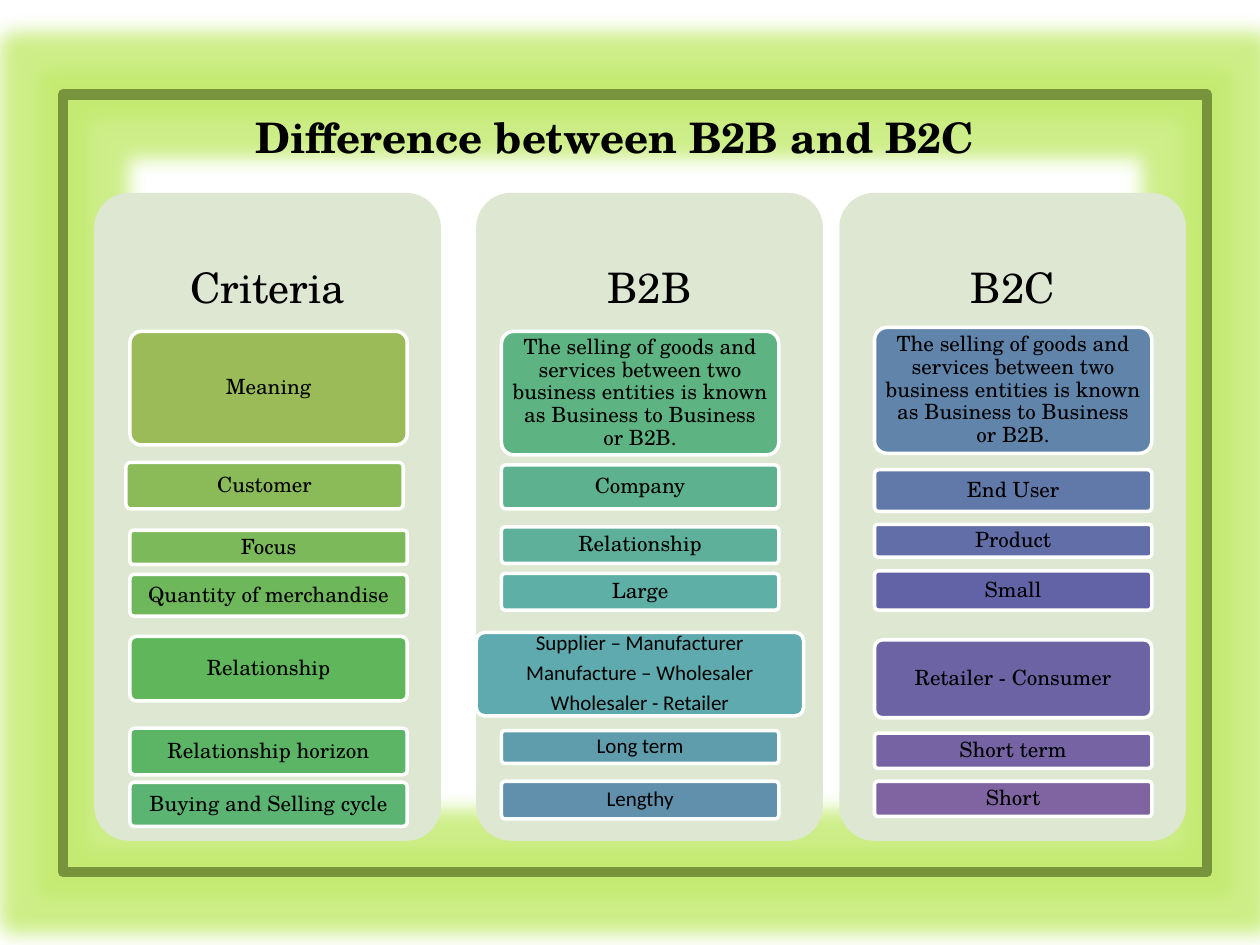
"""Build the slide comparing B2B and B2C by criteria."""
from lxml.etree import SubElement
from pptx import Presentation
from pptx.dml.color import RGBColor
from pptx.enum.shapes import MSO_SHAPE
from pptx.enum.text import MSO_ANCHOR, PP_ALIGN
from pptx.oxml.ns import qn
from pptx.util import Cm, Pt

BLACK = RGBColor(0x00, 0x00, 0x00)
WHITE = RGBColor(0xFF, 0xFF, 0xFF)
FRAME_GREEN = RGBColor(0x77, 0x93, 0x3C)
PANEL_GREEN = RGBColor(0xDE, 0xE7, 0xD1)
GLOW_GREEN = RGBColor(0xC2, 0xEA, 0x6C)
CARD_FILLS = [RGBColor.from_string(code) for code in (
    "9BBB59 8BBA59 7CB95A 6EB75A 5FB65B 5CB565 5CB473 "
    "5DB381 5DB18E 5EB09A 5EAFA6 5FAAAE 5F9DAC 6090AB "
    "6084AA 6179A8 626EA7 6263A6 6C63A5 7663A3 8064A2").split()]

SERIF = "TeX Gyre Schola"
SANS = "Calibri"
PANEL_TOP, PANEL_WIDTH, PANEL_HEIGHT = 3.89, 6.99, 13.06
HEADING_HEIGHT = 3.91
CARD_WIDTH = 5.59
MEANING = ("The selling of goods and services between two business entities "
           "is known as Business to Business or B2B.")

COLUMNS = [
    ("Criteria", 1.9, 2.62, [
        ("Meaning", 6.68, 2.29, {}),
        ("Customer", 9.32, 0.94, {"left": 2.54}),
        ("Focus", 10.69, 0.69, {}),
        ("Quantity of merchandise", 11.58, 0.84, {}),
        ("Relationship", 12.83, 1.3, {}),
        ("Relationship horizon", 14.68, 0.94, {}),
        ("Buying and Selling cycle", 15.77, 0.89, {}),
    ]),
    ("B2B", 9.6, 10.11, [
        (MEANING, 6.68, 2.49, {}),
        ("Company", 9.37, 0.89, {}),
        ("Relationship", 10.62, 0.74, {}),
        ("Large", 11.56, 0.74, {}),
        ("Supplier – Manufacturer\nManufacture – Wholesaler\nWholesaler - Retailer",
         12.75, 1.68, {"left": 9.6, "width": 6.6, "font": SANS}),
        ("Long term", 14.73, 0.66, {"font": SANS}),
        ("Lengthy", 15.75, 0.76, {"font": SANS}),
    ]),
    ("B2C", 16.92, 17.63, [
        (MEANING, 6.6, 2.54, {}),
        ("End User", 9.47, 0.84, {}),
        ("Product", 10.57, 0.66, {}),
        ("Small", 11.51, 0.79, {}),
        ("Retailer - Consumer", 12.9, 1.57, {}),
        ("Short term", 14.78, 0.71, {}),
        ("Short", 15.75, 0.71, {}),
    ]),
]


def write_text(frame, text, size=12, font=SERIF, bold=False, spacing=0.9,
               inset=0.13, anchor=MSO_ANCHOR.MIDDLE):
    """Fill a text frame with centred paragraphs, one per line of text."""
    frame.word_wrap = True
    frame.vertical_anchor = anchor
    frame.margin_left = frame.margin_right = Cm(inset)
    frame.margin_top = frame.margin_bottom = Cm(inset)
    lines = text.split("\n")
    for index, line in enumerate(lines):
        paragraph = frame.paragraphs[0] if index == 0 else frame.add_paragraph()
        paragraph.alignment = PP_ALIGN.CENTER
        paragraph.line_spacing = spacing
        if index < len(lines) - 1:
            paragraph.space_after = Pt(0.35 * size)
        run = paragraph.add_run()
        run.text = line
        run.font.name = font
        run.font.size = Pt(size)
        run.font.bold = bold
        run.font.color.rgb = BLACK


def add_label(slide, text, left, top, width, height, **text_format):
    """Add a text box with formatted text."""
    label = slide.shapes.add_textbox(Cm(left), Cm(top), Cm(width), Cm(height))
    write_text(label.text_frame, text, **text_format)


def add_rounded(slide, left, top, width, height, fill):
    """Add a filled rounded rectangle without outline or shadow."""
    box = slide.shapes.add_shape(MSO_SHAPE.ROUNDED_RECTANGLE,
                                 Cm(left), Cm(top), Cm(width), Cm(height))
    box.adjustments[0] = 0.1
    box.shadow.inherit = False
    box.fill.solid()
    box.fill.fore_color.rgb = fill
    box.line.fill.background()
    return box


def add_card(slide, text, left, top, height, fill, width=CARD_WIDTH, font=SERIF):
    """Add a white-edged card with its text."""
    card = add_rounded(slide, left, top, width, height, fill)
    card.line.color.rgb = WHITE
    card.line.width = Pt(2)
    write_text(card.text_frame, text, font=font)


def add_glowing_frame(slide):
    """Add the green frame with its soft glow."""
    frame = slide.shapes.add_shape(MSO_SHAPE.RECTANGLE, Cm(1.27), Cm(1.91),
                                   Cm(23.06), Cm(15.67))
    frame.shadow.inherit = False
    frame.fill.background()
    frame.line.color.rgb = FRAME_GREEN
    frame.line.width = Pt(6)
    SubElement(frame.line._get_or_add_ln(), qn("a:round"))
    effects = frame._element.spPr.find(qn("a:effectLst"))
    glow = SubElement(effects, qn("a:glow"), rad=str(Cm(0.8)))
    tint = SubElement(glow, qn("a:srgbClr"), val=str(GLOW_GREEN))
    SubElement(tint, qn("a:alpha"), val="80000")


def add_column(slide, heading, panel_left, card_left, cards, fills):
    """Add a panel with its heading and cards."""
    add_rounded(slide, panel_left, PANEL_TOP, PANEL_WIDTH, PANEL_HEIGHT, PANEL_GREEN)
    add_label(slide, heading, panel_left, PANEL_TOP, PANEL_WIDTH, HEADING_HEIGHT,
              size=24, inset=0.25)
    for text, top, height, changes in cards:
        settings = {"left": card_left, **changes}
        add_card(slide, text, top=top, height=height, fill=next(fills), **settings)


def main():
    """Create and save the presentation."""
    presentation = Presentation()
    presentation.slide_width = Cm(25.4)
    presentation.slide_height = Cm(19.05)
    slide = presentation.slides.add_slide(presentation.slide_layouts[6])
    add_glowing_frame(slide)
    fills = iter(CARD_FILLS)
    for column in COLUMNS:
        add_column(slide, *column, fills)
    add_label(slide, "Difference between B2B and B2C", 4.24, 2.11, 16.31, 1.27,
              size=24, bold=True, spacing=1.0, anchor=MSO_ANCHOR.TOP)
    presentation.save("out.pptx")


if __name__ == "__main__":
    main()
